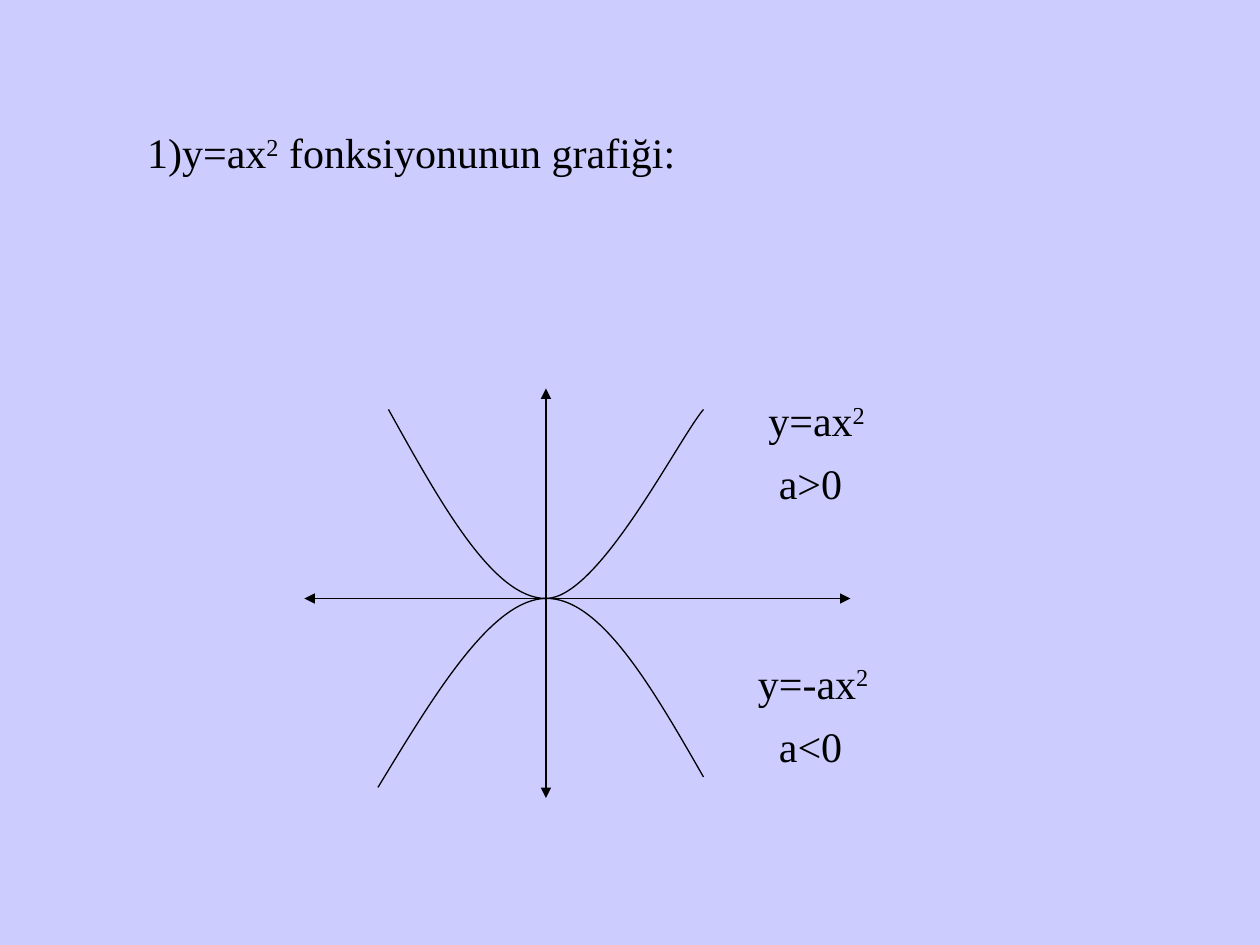
from lxml import etree
from pptx import Presentation
from pptx.dml.color import RGBColor
from pptx.enum import shapes, text
from pptx.oxml import ns
from pptx.util import Pt

COLORS = {"background": "CCCCFF", "ink": "000000"}
FONT_FORMAT = {"name": "Times New Roman", "size": Pt(24)}
LINE_WIDTH = 0.75
ORIGIN_X, ORIGIN_Y = 312, 342

# Axes run from the first point to the arrowhead at the second
AXES = [
    ((ORIGIN_X, 240), (ORIGIN_X, 456)),
    ((180, ORIGIN_Y), (486, ORIGIN_Y)),
    ((ORIGIN_X, 252), (ORIGIN_X, 222)),
    ((204, ORIGIN_Y), (174, ORIGIN_Y)),
]

# Each curve is a start point followed by two Bezier segments
CURVES = [
    [(222, 234), (252, 288), (282, 342), (ORIGIN_X, ORIGIN_Y),
     (342, 342), (387, 252), (402, 234)],
    [(216, 450), (248.5, 396.5), (281, 342.5), (ORIGIN_X, ORIGIN_Y),
     (343, 341.5), (372.5, 392.5), (402, 444)],
]

# Left, top, width, wrap, and (wording, is superscript) pieces
LABELS = [
    (432, 222, 132, True, [("y=ax", False), ("2", True)]),
    (426, 372, 96, True, [("y=-ax", False), ("2", True)]),
    (438, 258, 66, True, [("a>0", False)]),
    (438, 408, 60, True, [("a<0", False)]),
    (77, 69, 317, False, [("1)y=ax", False), ("2", True),
                          (" fonksiyonunun grafiği:", False)]),
]


def color(key):
    return RGBColor.from_string(COLORS[key])


def style_line(line):
    line.color.rgb = color("ink")
    line.width = Pt(LINE_WIDTH)


def add_axis(slide, start, end):
    axis = slide.shapes.add_connector(
        shapes.MSO_CONNECTOR.STRAIGHT, *(Pt(v) for v in start + end))
    style_line(axis.line)
    etree.SubElement(axis.line._get_or_add_ln(), ns.qn("a:tailEnd"), type="triangle")
    etree.SubElement(axis._element.spPr, ns.qn("a:effectLst"))


def add_curve(slide, points):
    start, *others = [(Pt(x), Pt(y)) for x, y in points]
    builder = slide.shapes.build_freeform(*start)
    builder.add_line_segments(others, close=False)
    curve = builder.convert_to_shape()
    curve.shadow.inherit = False
    curve.fill.background()
    style_line(curve.line)

    # Gather every three line points into one cubic segment
    outline = next(curve._element.iter(ns.qn("a:path")))
    segments = outline.findall(ns.qn("a:lnTo"))
    for first in range(0, len(segments), 3):
        cubic = etree.SubElement(outline, ns.qn("a:cubicBezTo"))
        for segment in segments[first:first + 3]:
            cubic.append(segment[0])
            outline.remove(segment)


def add_label(slide, left, top, width, wrap, pieces):
    label = slide.shapes.add_textbox(Pt(left), Pt(top), Pt(width), Pt(36))
    frame = label.text_frame
    frame.word_wrap = wrap
    frame.auto_size = text.MSO_AUTO_SIZE.SHAPE_TO_FIT_TEXT
    for wording, superscript in pieces:
        run = frame.paragraphs[0].add_run()
        run.text = wording
        for attribute, value in FONT_FORMAT.items():
            setattr(run.font, attribute, value)
        run.font.color.rgb = color("ink")
        if superscript:
            run._r.get_or_add_rPr().set("baseline", "30000")


def main():
    prs = Presentation()
    prs.slide_width, prs.slide_height = Pt(720), Pt(540)
    slide = prs.slides.add_slide(prs.slide_layouts[6])
    slide.background.fill.solid()
    slide.background.fill.fore_color.rgb = color("background")

    # Coordinate axes
    for start, end in AXES:
        add_axis(slide, start, end)

    # Parabolas
    for points in CURVES:
        add_curve(slide, points)

    # Heading and function labels
    for label in LABELS:
        add_label(slide, *label)

    prs.save("out.pptx")


if __name__ == "__main__":
    main()
